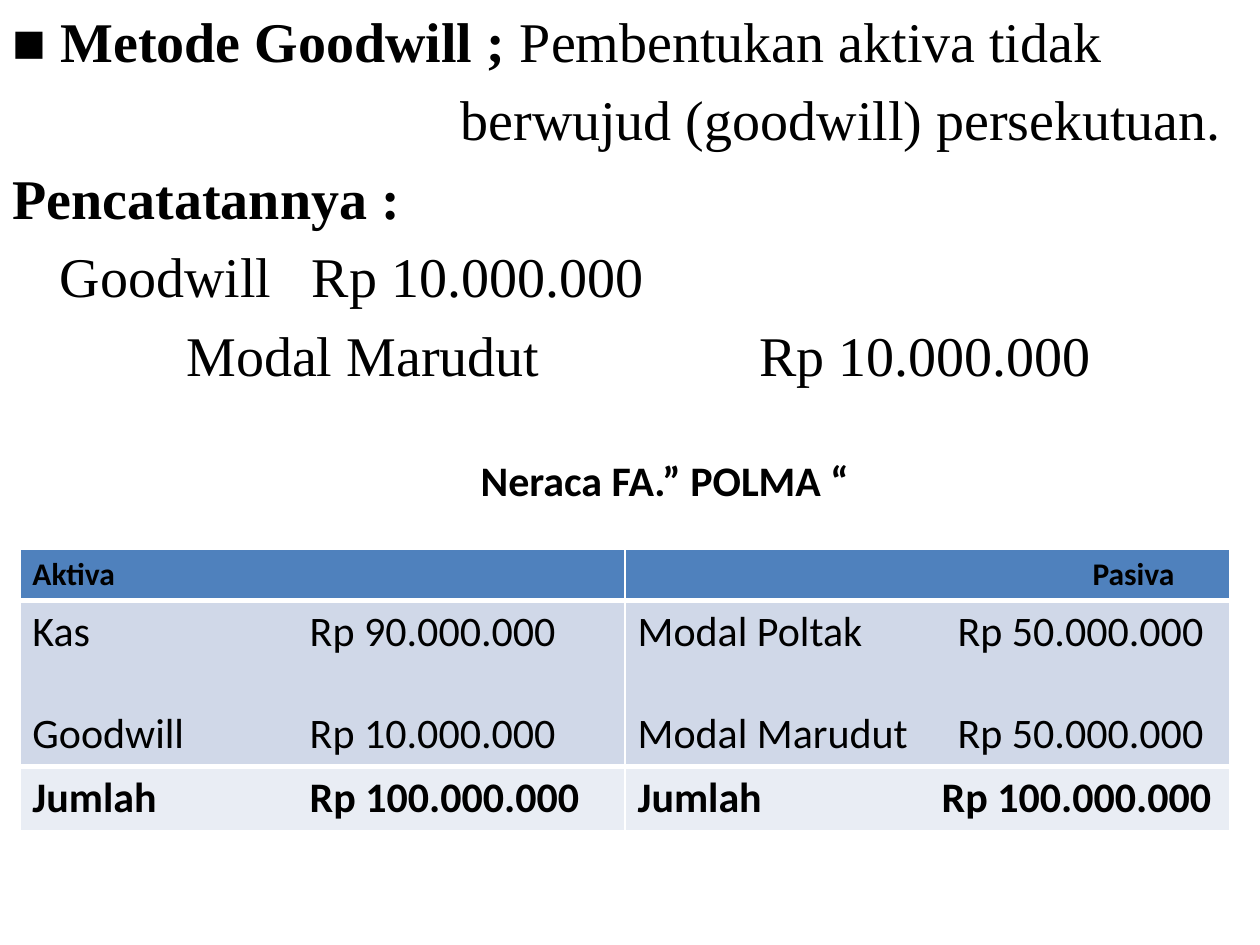
from dataclasses import dataclass

import lxml.etree
import pptx
import pptx.dml.color
import pptx.enum.text
import pptx.oxml.ns
import pptx.util

Cm = pptx.util.Cm
Pt = pptx.util.Pt
qn = pptx.oxml.ns.qn


@dataclass(frozen=True)
class Theme:
    serif: str = "Times New Roman"
    sans: str = "Calibri"
    ink: str = "000000"
    rule: str = "FFFFFF"
    header_fill: str = "4F81BD"
    entry_fill: str = "D0D8E8"
    total_fill: str = "E9EDF4"
    body_size: int = 32
    table_size: int = 24
    header_size: int = 18
    header_rule: int = 3


THEME = Theme()


@dataclass(frozen=True)
class Line:
    """One paragraph; bold_lead is a bold opening, lengths are in cm."""
    text: str
    bold: bool = False
    bold_lead: str = ""
    tab: float | None = None
    margin: float = 0
    indent: float = 0
    space_before: float | None = None


@dataclass(frozen=True)
class BalanceRow:
    height: float
    fill: str
    size: int
    cells: tuple[tuple[Line, ...], ...]


JOURNAL = (
    Line("Pembentukan aktiva tidak", bold_lead="■ Metode Goodwill ; "),
    Line("berwujud (goodwill) persekutuan.", margin=9.03),
    Line("Pencatatannya :", bold=True),
    Line("Goodwill\tRp 10.000.000", margin=0.95),
    Line("Modal Marudut\t\t\t\tRp 10.000.000", margin=3.63, indent=-0.13),
)

ASSET_TAB = 5.59
EQUITY_TAB = 6.45
ENTRY_GAP = 29

BALANCE = (
    BalanceRow(1.02, THEME.header_fill, THEME.header_size, (
        (Line("Aktiva", bold=True),),
        (Line("Pasiva", bold=True, margin=9.17),),
    )),
    BalanceRow(3.33, THEME.entry_fill, THEME.table_size, (
        (Line("Kas\tRp 90.000.000", tab=ASSET_TAB),
         Line("Goodwill\tRp 10.000.000", tab=ASSET_TAB, space_before=ENTRY_GAP)),
        (Line("Modal Poltak\tRp 50.000.000", tab=EQUITY_TAB),
         Line("Modal Marudut\tRp 50.000.000", tab=EQUITY_TAB, space_before=ENTRY_GAP)),
    )),
    BalanceRow(1.29, THEME.total_fill, THEME.table_size, (
        (Line("Jumlah\tRp 100.000.000", bold=True, tab=ASSET_TAB),),
        (Line("Jumlah\tRp 100.000.000", bold=True, tab=6.13),),
    )),
)


def set_layout(para, line: Line) -> None:
    """Set either a tab stop or margin and indent; an indent would cancel the stop."""
    properties = para._p.get_or_add_pPr()
    if line.tab is None:
        properties.set("marL", str(int(Cm(line.margin))))
        properties.set("indent", str(int(Cm(line.indent))))
        lxml.etree.SubElement(properties, qn("a:buNone"))
    else:
        stops = lxml.etree.SubElement(properties, qn("a:tabLst"))
        lxml.etree.SubElement(stops, qn("a:tab"), pos=str(int(Cm(line.tab))), algn="l")


def write_lines(frame, lines: tuple[Line, ...], font: str, size: int) -> None:
    for index, line in enumerate(lines):
        para = frame.add_paragraph() if index else frame.paragraphs[0]
        set_layout(para, line)
        if line.space_before is not None:
            para.space_before = Pt(line.space_before)
        para.font.name = font
        para.font.size = Pt(size)
        para.font.bold = line.bold
        para.font.color.rgb = pptx.dml.color.RGBColor.from_string(THEME.ink)
        if line.bold_lead:
            lead = para.add_run()
            lead.text = line.bold_lead
            lead.font.bold = True
        para.add_run().text = line.text


def add_rule(cell, side: str) -> None:
    """Draw the heavy header rule on one side: lnT or lnB."""
    edge = lxml.etree.Element(qn(f"a:{side}"), w=str(int(Pt(THEME.header_rule))))
    fill = lxml.etree.SubElement(edge, qn("a:solidFill"))
    lxml.etree.SubElement(fill, qn("a:srgbClr"), val=THEME.rule)
    cell._tc.get_or_add_tcPr().insert(0, edge)


def add_balance_sheet(page) -> None:
    height = sum(row.height for row in BALANCE)
    table = page.shapes.add_table(
        len(BALANCE), 2, Cm(0.4), Cm(11.08), Cm(24.4), Cm(height)).table
    for row_index, row in enumerate(BALANCE):
        table.rows[row_index].height = Cm(row.height)
        for column_index, lines in enumerate(row.cells):
            cell = table.cell(row_index, column_index)
            cell.fill.solid()
            cell.fill.fore_color.rgb = pptx.dml.color.RGBColor.from_string(row.fill)
            write_lines(cell.text_frame, lines, THEME.sans, row.size)
    for column_index in range(2):
        add_rule(table.cell(0, column_index), "lnB")
        add_rule(table.cell(1, column_index), "lnT")


def add_balance_heading(page) -> None:
    box = page.shapes.add_textbox(Cm(7.14), Cm(9.04), Cm(10.72), Cm(1.27))
    box.text_frame.word_wrap = True
    heading = Line("Neraca FA.” POLMA “", bold=True, margin=2.3)
    write_lines(box.text_frame, (heading,), THEME.sans, THEME.table_size)


def main() -> None:
    deck = pptx.Presentation()
    deck.slide_width, deck.slide_height = Cm(25.4), Cm(19.05)
    page = deck.slides.add_slide(deck.slide_layouts.get_by_name("Title and Content"))
    title = page.shapes.title
    title.element.getparent().remove(title.element)

    body = page.placeholders[1]
    body.left, body.top = Cm(0), Cm(0)
    body.width, body.height = deck.slide_width, deck.slide_height
    body.text_frame.auto_size = pptx.enum.text.MSO_AUTO_SIZE.NONE
    write_lines(body.text_frame, JOURNAL, THEME.serif, THEME.body_size)

    add_balance_sheet(page)
    add_balance_heading(page)
    deck.save("out.pptx")


if __name__ == "__main__":
    main()
